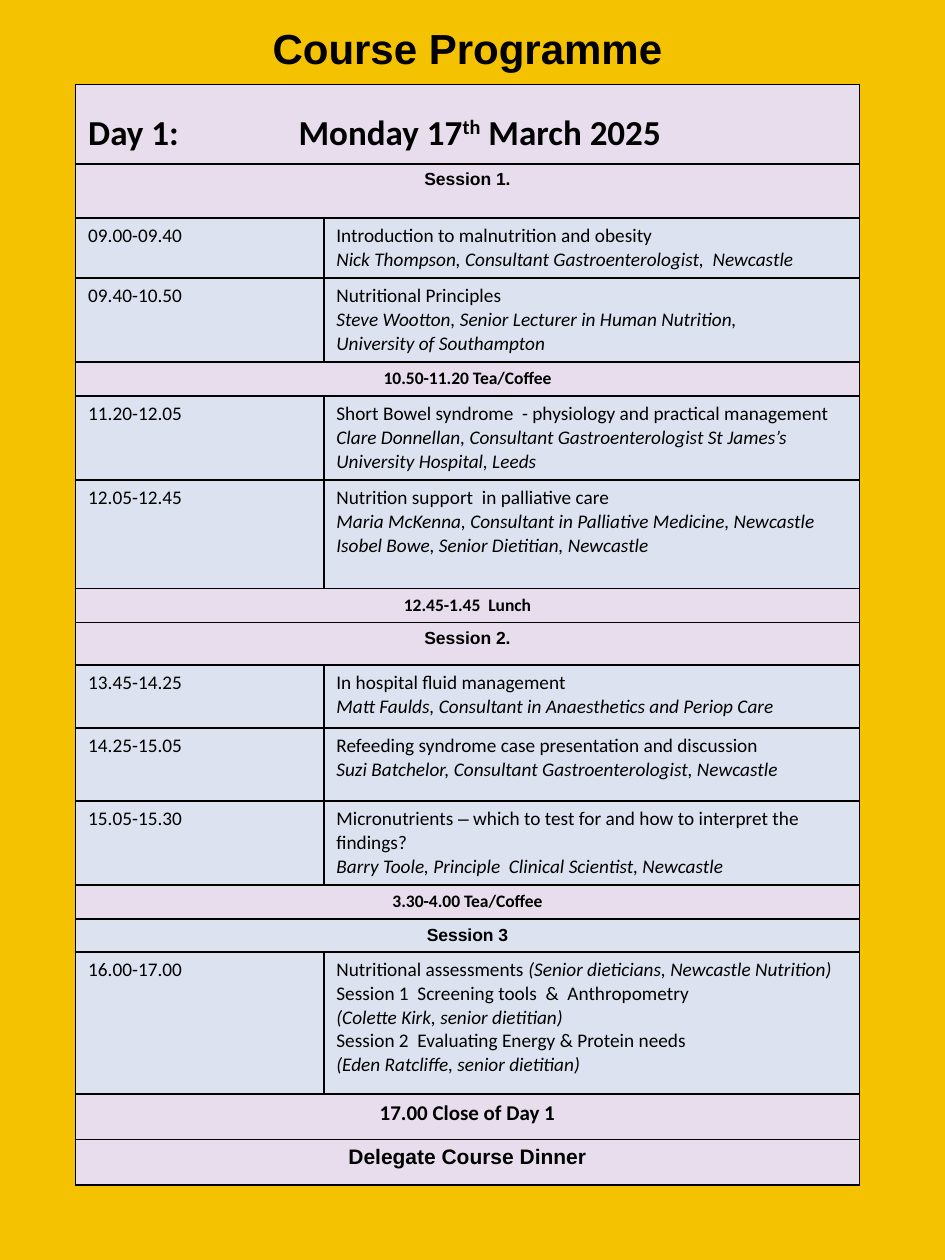
from dataclasses import dataclass
from functools import partial

from lxml.etree import SubElement
from pptx import Presentation
from pptx.dml.color import RGBColor as Rgb
from pptx.enum.text import MSO_ANCHOR as Anchor, PP_ALIGN as Align
from pptx.oxml.ns import qn
from pptx.util import Inches, Pt

HEX = {"gold": "F5C201", "pink": "E7DDED", "blue": "DCE2EF", "ink": "000000"}
UNIT = Inches(0.01)  # grid of 750 columns by 1000 rows
COLS = (197, 425)


@dataclass(frozen=True)
class Bit:
    text: str
    italic: bool = False
    font: str = "Calibri"
    lift: int = 0


@dataclass(frozen=True)
class Band:
    """A row merged across the table."""
    rows: int
    line: tuple
    size: int = 10
    fill: str = "pink"


@dataclass(frozen=True)
class Talk:
    """A timed row; each line is a tuple of bits."""
    rows: int
    time: str
    lines: tuple


it = partial(Bit, italic=True)
sans = partial(Bit, font="Arial")

PLAN = (
    Band(63, (Bit("Day 1:\tMonday 17"), Bit("th", lift=30), Bit(" March 2025")), 20),
    Band(43, (sans("Session 1."),)),
    Talk(47, "09.00-09.40", (
        (Bit("Introduction to malnutrition and obesity"),),
        (it("Nick Thompson, Consultant Gastroenterologist,  Newcastle"),))),
    Talk(65, "09.40-10.50", (
        (Bit("Nutritional Principles"),),
        (it("Steve Wootton, Senior Lecturer in Human Nutrition,"),),
        (it("University of Southampton"),))),
    Band(27, (Bit("10.50-11.20 Tea/Coffee"),)),
    Talk(65, "11.20-12.05", (
        (Bit("Short Bowel syndrome  - physiology and practical management"),),
        (it("Clare Donnellan, Consultant Gastroenterologist St James’s "
            "University Hospital, Leeds"),))),
    Talk(86, "12.05-12.45", (
        (Bit("Nutrition support  in palliative care"),),
        (it("Maria McKenna, Consultant in Palliative Medicine, Newcastle"),),
        (it("Isobel Bowe, Senior Dietitian, Newcastle"),))),
    Band(27, (Bit("12.45-1.45  Lunch"),)),
    Band(34, (sans("Session 2."),)),
    Talk(50, "13.45-14.25", (
        (Bit("In hospital fluid management"),),
        (it("Matt Faulds, Consultant in Anaesthetics and Periop Care"),))),
    Talk(58, "14.25-15.05", (
        (Bit("Refeeding syndrome case presentation and discussion"),),
        (it("Suzi Batchelor, Consultant Gastroenterologist, Newcastle"),))),
    Talk(65, "15.05-15.30", (
        (Bit("Micronutrients "), sans("–"),
         Bit(" which to test for and how to interpret the findings?")),
        (it("Barry Toole, Principle  Clinical Scientist, Newcastle"),))),
    Band(27, (Bit("3.30-4.00 Tea/Coffee"),)),
    Band(26, (sans("Session 3"),), fill="blue"),
    Talk(113, "16.00-17.00", (
        (Bit("Nutritional assessments "),
         it("(Senior dieticians, Newcastle Nutrition)")),
        (Bit("Session 1  Screening tools  &  Anthropometry"),),
        (it("(Colette Kirk, senior dietitian)"),),
        (Bit("Session 2  Evaluating Energy & Protein needs"),),
        (it("(Eden Ratcliffe, senior dietitian)"),))),
    Band(36, (Bit("17.00 Close of Day 1"),), 12),
    Band(36, (sans("Delegate Course Dinner"),), 12),
)


def style(obj, **form) -> None:
    for name, value in form.items():
        setattr(obj, name, value)


def write(frame, lines: tuple, size: int, bold: bool = False,
          align: Align = Align.LEFT) -> None:
    for i, line in enumerate(lines):
        para = frame.add_paragraph() if i else frame.paragraphs[0]
        para.alignment = align
        for bit in line:
            run = para.add_run()
            run.text = bit.text
            style(run.font, name=bit.font, size=Pt(size), bold=bold, italic=bit.italic)
            run.font.color.rgb = Rgb.from_string(HEX["ink"])
            if bit.lift:
                run._r.get_or_add_rPr().set("baseline", str(bit.lift * 1000))


def paint(cell, fill: str) -> None:
    """Give a cell its borders, then its fill."""
    props = cell._tc.get_or_add_tcPr()
    for side in ("lnL", "lnR", "lnT", "lnB"):
        edge = SubElement(props, qn(f"a:{side}"), w=str(Pt(1)))
        solid = SubElement(edge, qn("a:solidFill"))
        SubElement(solid, qn("a:srgbClr"), val=HEX["ink"])
    cell.fill.solid()
    cell.fill.fore_color.rgb = Rgb.from_string(HEX[fill])


def set_tab(para, cols: int) -> None:
    tabs = SubElement(para._p.get_or_add_pPr(), qn("a:tabLst"))
    SubElement(tabs, qn("a:tab"), pos=str(cols * UNIT), algn="l")


def draw_title(slide) -> None:
    title = slide.shapes.title
    style(title, left=127 * UNIT, top=12 * UNIT, width=488 * UNIT, height=51 * UNIT)
    style(title.text_frame, word_wrap=True, vertical_anchor=Anchor.MIDDLE)
    write(title.text_frame, ((sans("Course Programme"),),), 24, True, Align.CENTER)


def draw_plan(slide) -> None:
    high = sum(item.rows for item in PLAN)
    table = slide.shapes.add_table(len(PLAN), len(COLS), 60 * UNIT, 67 * UNIT,
                                   sum(COLS) * UNIT, high * UNIT).table
    style(table, first_row=False, horz_banding=False)
    for col, wide in zip(table.columns, COLS):
        col.width = wide * UNIT
    for i, item in enumerate(PLAN):
        table.rows[i].height = item.rows * UNIT
        left, right = table.cell(i, 0), table.cell(i, 1)
        band = isinstance(item, Band)
        for cell in (left, right):
            paint(cell, item.fill if band else "blue")
        if band:
            left.merge(right)
            write(left.text_frame, (item.line,), item.size, True,
                  Align.CENTER if i else Align.LEFT)
        else:
            write(left.text_frame, ((Bit(item.time),),), 11)
            write(right.text_frame, item.lines, 11)
    head = table.cell(0, 0)
    head.margin_top = 22 * UNIT
    set_tab(head.text_frame.paragraphs[0], 167)


def main() -> None:
    deck = Presentation()
    style(deck, slide_width=750 * UNIT, slide_height=1000 * UNIT)
    slide = deck.slides.add_slide(deck.slide_layouts.get_by_name("Title Only"))
    back = slide.background.fill
    back.solid()
    back.fore_color.rgb = Rgb.from_string(HEX["gold"])
    draw_plan(slide)
    draw_title(slide)
    deck.save("out.pptx")


if __name__ == "__main__":
    main()
